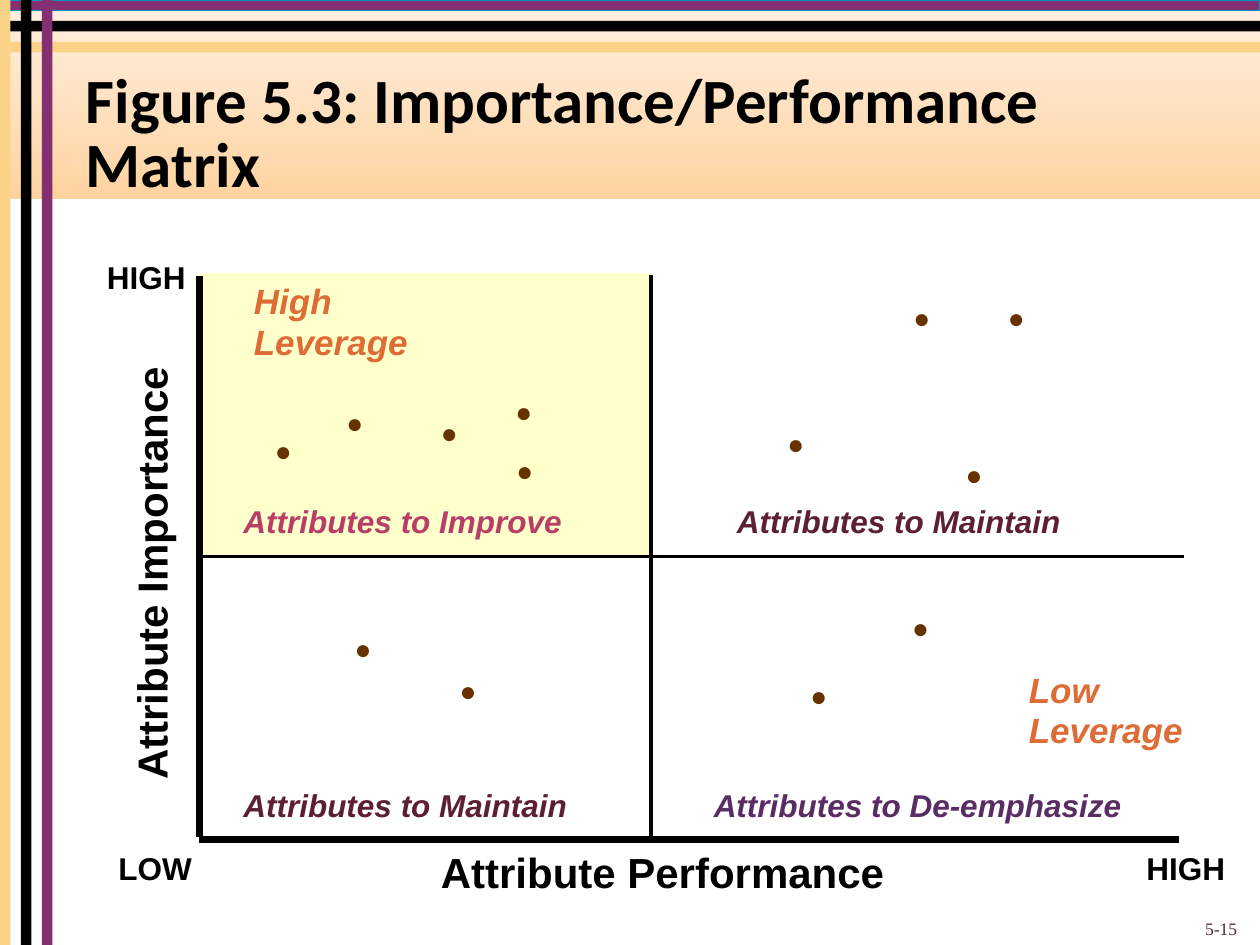
from pptx import Presentation
from pptx.dml.color import RGBColor
from pptx.enum.shapes import MSO_CONNECTOR, MSO_SHAPE
from pptx.enum.text import MSO_ANCHOR, MSO_AUTO_SIZE, PP_ALIGN
from pptx.oxml.ns import qn
from pptx.util import Inches, Pt
from lxml import etree

RECTANGLE = MSO_SHAPE.RECTANGLE
STRAIGHT = MSO_CONNECTOR.STRAIGHT
TOP, MIDDLE, BOTTOM = MSO_ANCHOR.TOP, MSO_ANCHOR.MIDDLE, MSO_ANCHOR.BOTTOM
FIT_SHAPE = MSO_AUTO_SIZE.SHAPE_TO_FIT_TEXT
LEFT, RIGHT = PP_ALIGN.LEFT, PP_ALIGN.RIGHT

BLACK = RGBColor(0x00, 0x00, 0x00)
PURPLE = RGBColor(0x85, 0x2F, 0x73)
TEAL = RGBColor(0x03, 0x91, 0xBD)
SAND = RGBColor(0xFB, 0xD3, 0x88)
PEACH = RGBColor(0xFF, 0xD3, 0xA0)
PALE_PEACH = RGBColor(0xFF, 0xF0, 0xE3)
PALE_YELLOW = RGBColor(0xFF, 0xFF, 0xCC)
BROWN = RGBColor(0x66, 0x33, 0x00)
PINK = RGBColor(0xB8, 0x3D, 0x68)
WINE = RGBColor(0x5C, 0x1F, 0x34)
DARK_WINE = RGBColor(0x51, 0x25, 0x3A)
VIOLET = RGBColor(0x5A, 0x2C, 0x64)
ORANGE = RGBColor(0xDE, 0x6C, 0x36)

COLUMNS, ROWS = 120, 90
CELL = Inches(10) // COLUMNS

TITLE = dict(name="Calibri", size=Pt(36))
CORNER = dict(size=Pt(18))
AXIS = dict(size=Pt(24))
QUADRANT = dict(size=Pt(18), italic=True)
LEVERAGE = dict(size=Pt(20), italic=True)
DOT = dict(size=Pt(16))
PAGE_NUMBER = dict(name="Times New Roman", size=Pt(10), bold=False)


def cells(*counts):
    return [round(count * CELL) for count in counts]


class MatrixPage:
    """Draws on one slide; every place is given in grid columns and rows."""

    font = dict(name="Arial", bold=True)

    def __init__(self, deck):
        self.shapes = deck.slides.add_slide(deck.slide_layouts[6]).shapes

    def block(self, place, color):
        box = self.shapes.add_shape(RECTANGLE, *cells(*place))
        box.shadow.inherit = False
        box.line.fill.background()
        box.fill.solid()
        box.fill.fore_color.rgb = color
        return box

    def gradient_block(self, place, bottom_color, top_color):
        box = self.block(place, bottom_color)
        box.fill.gradient()
        box.fill.gradient_angle = 90
        for stop, color in zip(box.fill.gradient_stops, (bottom_color, top_color)):
            stop.color.rgb = color

    def rule(self, start, end, weight):
        line = self.shapes.add_connector(STRAIGHT, *cells(*start, *end))
        line.line.color.rgb = BLACK
        line.line.width = Pt(weight)
        etree.SubElement(line._element.spPr, qn("a:effectLst"))

    def text(self, place, lines, style, color=BLACK, anchor=TOP, align=LEFT,
             wrap=True, spacing=None, gap=0):
        """Write one paragraph per line, with gap points between them."""
        box = self.shapes.add_textbox(*cells(*place))
        frame = box.text_frame
        frame.word_wrap = wrap
        frame.vertical_anchor = anchor
        for index, line in enumerate(lines):
            para = frame.add_paragraph() if index else frame.paragraphs[0]
            para.alignment = align
            if spacing:
                para.line_spacing = spacing
            if index:
                para.space_before = Pt(gap)
            span = para.add_run()
            span.text = line
            span.font.color.rgb = color
            for name, value in {**self.font, **style}.items():
                setattr(span.font, name, value)
        return box

    def dot(self, column, row):
        box = self.text((column, row, 4.3, 4.3), ["●"], DOT, BROWN, wrap=False)
        box.text_frame.auto_size = FIT_SHAPE


def draw_frame(page):
    page.gradient_block((0, 0, COLUMNS, 19), PEACH, PALE_PEACH)
    top_bar = page.block((0, 0, COLUMNS, 1), PURPLE)
    top_bar.line.color.rgb = TEAL
    top_bar.line.width = 0
    for row, color in ((4, SAND), (2, BLACK)):
        page.block((0, row, COLUMNS, 1), color)
    for column, color in ((4, PURPLE), (0, SAND), (2, BLACK)):
        page.block((column, 0, 1, ROWS), color)


def draw_matrix(page):
    page.block((19, 26, 43, 27), PALE_YELLOW)
    page.rule((62, 26.2), (62, 79.8), 2)
    page.rule((19.2, 53), (112.8, 53), 2)
    page.rule((19, 26.3), (19, 79.7), 4)
    page.rule((19, 80), (112.3, 80), 4)

    for column, row, label in ((9, 24, "HIGH"), (108, 80.3, "HIGH"), (10.1, 80.3, "LOW")):
        page.text((column, row, 11, 4.8), [label], CORNER)

    page.text((40.8, 80, 50, 6), ["Attribute Performance"], AXIS)
    importance = page.text((-8, 51.5, 46.5, 3.6), ["Attribute Importance"], AXIS, spacing=0.5)
    importance.rotation = 270
    importance.text_frame.margin_left = Inches(0.19)

    for column, row, width, label, color in (
        (22, 47.2, 39, "Attributes to Improve", PINK),
        (69, 47.2, 39, "Attributes to Maintain", WINE),
        (22, 74.3, 39, "Attributes to Maintain", WINE),
        (66.8, 74.3, 46, "Attributes to De-emphasize", VIOLET),
    ):
        page.text((column, row, width, 4.8), [label], QUADRANT, color)

    for column, row, width, level in ((23, 27.8, 26, "High"), (96.8, 64.8, 17.2, "Low")):
        page.text((column, row, width, 7.3), [level, "Leverage"], LEVERAGE, ORANGE,
                  spacing=0.5, gap=11)

    for column, row in (
        (25, 40.7), (31.8, 38), (40.8, 39), (47.9, 37), (48, 42.6),
        (73.8, 40), (85.8, 28), (90.8, 43), (94.8, 28),
        (32.6, 59.6), (42.6, 63.6),
        (76, 64), (85.7, 57.6),
    ):
        page.dot(column, row)


def main():
    deck = Presentation()
    deck.slide_width, deck.slide_height = cells(COLUMNS, ROWS)
    page = MatrixPage(deck)
    draw_frame(page)
    page.text((7, 7, 111, 12), ["Figure 5.3: Importance/Performance Matrix"], TITLE,
              anchor=MIDDLE, spacing=0.85)
    draw_matrix(page)
    page.text((91, 84, 28, 6), ["5-15"], PAGE_NUMBER, DARK_WINE, BOTTOM, RIGHT)
    deck.save("out.pptx")


if __name__ == "__main__":
    main()
